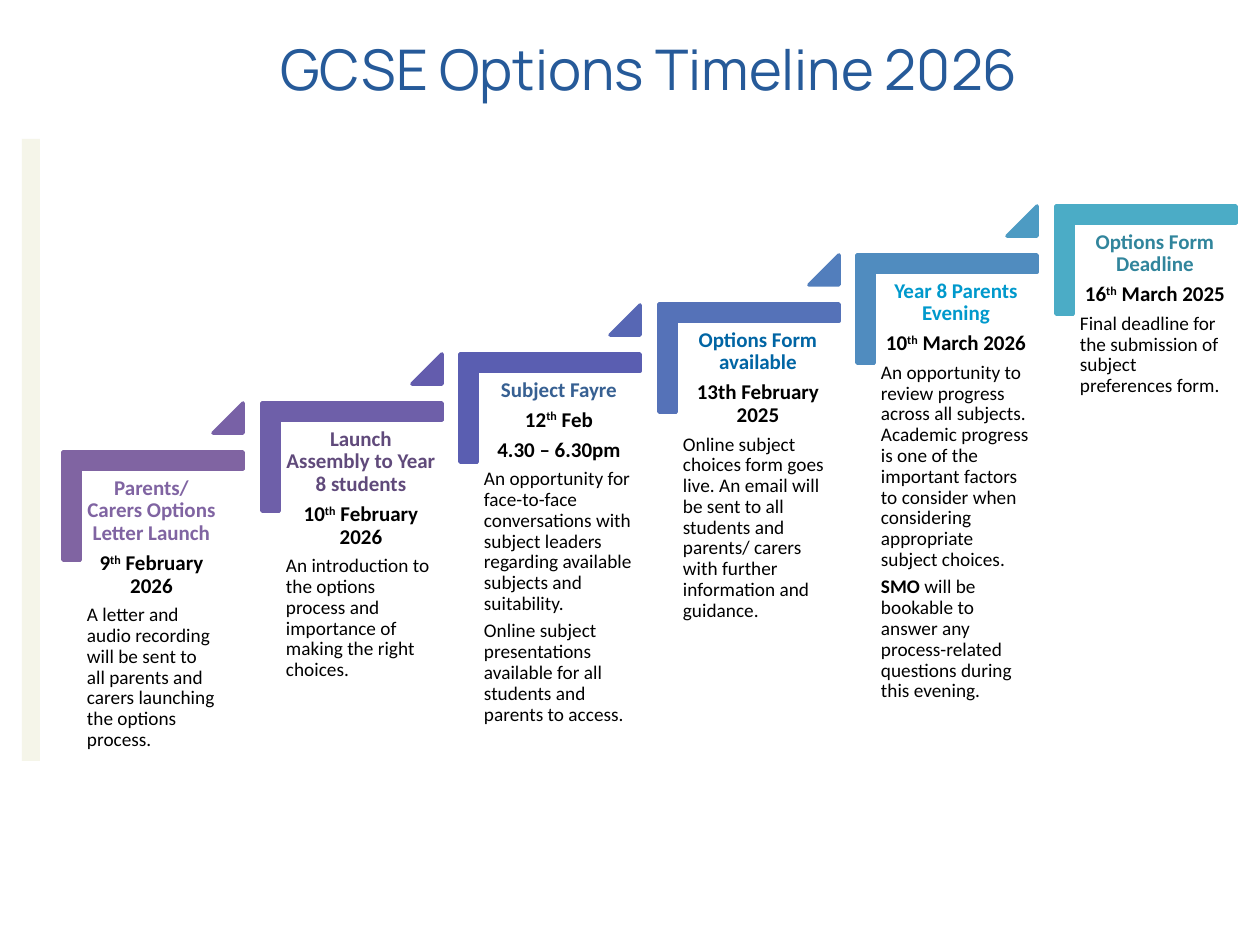
from dataclasses import dataclass

from pptx import Presentation
from pptx.dml.color import RGBColor
from pptx.enum.shapes import MSO_SHAPE
from pptx.enum.text import MSO_ANCHOR, MSO_AUTO_SIZE, PP_ALIGN
from pptx.util import Emu, Pt

PX = 914400 / 126
STEP_ACROSS, STEP_UP = 198.6, 49.2


@dataclass(frozen=True)
class Stage:
    """One step; pieces between bars are raised in dates and bold in details."""
    color: str
    heading_color: str
    heading: str
    dates: tuple[str, ...]
    details: tuple[str, ...]
    arrow_color: str | None = None
    text_width: int = 162


STAGES = [
    Stage("8064A2", "8064A2", "Parents/ Carers Options Letter Launch",
          ("9|th| February 2026",),
          ("A letter and audio recording will be sent to all parents and carers "
           "launching the options process.",), "7861A6", 141),
    Stage("6E5FA9", "604A7B", "Launch Assembly to Year 8 students",
          ("10|th| February 2026",),
          ("An introduction to the options process and importance of making "
           "the right choices.",), "635CAD"),
    Stage("5A5EB1", "376092", "Subject Fayre",
          ("12|th| Feb", "4.30 – 6.30pm"),
          ("An opportunity for face-to-face conversations with subject leaders "
           "regarding available subjects and suitability.",
           "Online subject presentations available for all students and parents "
           "to access."), "5767B4"),
    Stage("5572B8", "0065A4", "Options Form available",
          ("13th February 2025",),
          ("Online subject choices form goes live. An email will be sent to all "
           "students and parents/ carers with further information and guidance.",),
          "527EBC"),
    Stage("508CBF", "0099CC", "Year 8 Parents Evening",
          ("10|th| March 2026",),
          ("An opportunity to review progress across all subjects. Academic "
           "progress is one of the important factors to consider when considering "
           "appropriate subject choices.",
           "|SMO| will be bookable to answer any process-related questions during "
           "this evening."), "4D9BC3"),
    Stage("4BACC6", "31859C", "Options Form Deadline",
          ("16|th| March 2025",),
          ("Final deadline for the submission of subject preferences form.",)),
]


def px(n: int) -> Emu:
    return Emu(round(n * PX))


def rgb(color: str) -> RGBColor:
    return RGBColor.from_string(color)


def add_shape(s, kind, box: tuple[int, ...], color: str, line_pt: int = 0):
    sp = s.shapes.add_shape(kind, *map(px, box))
    sp.shadow.inherit = False
    sp.fill.solid()
    sp.fill.fore_color.rgb = rgb(color)
    if line_pt:
        sp.line.color.rgb = rgb(color)
        sp.line.width = Pt(line_pt)
    else:
        sp.line.fill.background()
    return sp


def add_text_box(s, box: tuple[int, ...]):
    tf = s.shapes.add_textbox(*map(px, box)).text_frame
    tf.word_wrap = True
    tf.vertical_anchor = MSO_ANCHOR.TOP
    return tf


def add_run(p, text: str, size: int, color: str, bold: bool = False,
            font: str = "Calibri"):
    r = p.add_run()
    r.text = text
    for name, value in {"name": font, "size": Pt(size), "bold": bold}.items():
        setattr(r.font, name, value)
    r.font.color.rgb = rgb(color)
    return r


def add_stage_text(s, stage: Stage, x: int, y: int) -> None:
    tf = add_text_box(s, (x, y, stage.text_width, 142))
    for side in ("left", "right", "top", "bottom"):
        setattr(tf, f"margin_{side}", px(6))
    lines = [(stage.heading, 12, stage.heading_color, True)]
    lines += [(date, 12, "000000", True) for date in stage.dates]
    lines += [(detail, 11, "000000", False) for detail in stage.details]
    for i, (text, size, color, is_head) in enumerate(lines):
        p = tf.add_paragraph() if i else tf.paragraphs[0]
        layout = {"alignment": PP_ALIGN.CENTER if is_head else PP_ALIGN.LEFT,
                  "line_spacing": 0.9, "space_after": Pt(size * 0.35)}
        for name, value in layout.items():
            setattr(p, name, value)
        for k, piece in enumerate(text.split("|")):
            if not piece:
                continue
            marked = k % 2 == 1
            r = add_run(p, piece, size, color, is_head or marked)
            if is_head and marked:
                r._r.get_or_add_rPr().set("baseline", "30000")


def add_stage(s, stage: Stage, index: int) -> None:
    dx, dy = round(index * STEP_ACROSS), round(index * STEP_UP)
    corner = add_shape(s, MSO_SHAPE.CORNER, (99 + dx, 416 - dy, 108, 180),
                       stage.color, 2)
    corner.rotation = 90
    for i in range(2):
        corner.adjustments[i] = 0.16
    add_stage_text(s, stage, 81 + dx, 471 - dy)
    if stage.arrow_color:
        arrow = add_shape(s, MSO_SHAPE.ISOSCELES_TRIANGLE,
                          (213 + dx, 403 - dy, 30, 30), stage.arrow_color, 2)
        arrow.adjustments[0] = 1


def main() -> None:
    prs = Presentation()
    prs.slide_width, prs.slide_height = px(1260), px(945)
    s = prs.slides.add_slide(prs.slide_layouts[6])

    title = add_text_box(s, (75, 28, 1149, 81))
    title.auto_size = MSO_AUTO_SIZE.SHAPE_TO_FIT_TEXT
    p = title.paragraphs[0]
    p.alignment = PP_ALIGN.CENTER
    add_run(p, "GCSE Options Timeline 2026", 32, "265A99", font="Manrope")

    add_shape(s, MSO_SHAPE.RECTANGLE, (22, 139, 18, 622), "F5F5E9")
    for index, stage in enumerate(STAGES):
        add_stage(s, stage, index)
    prs.save("out.pptx")


if __name__ == "__main__":
    main()
